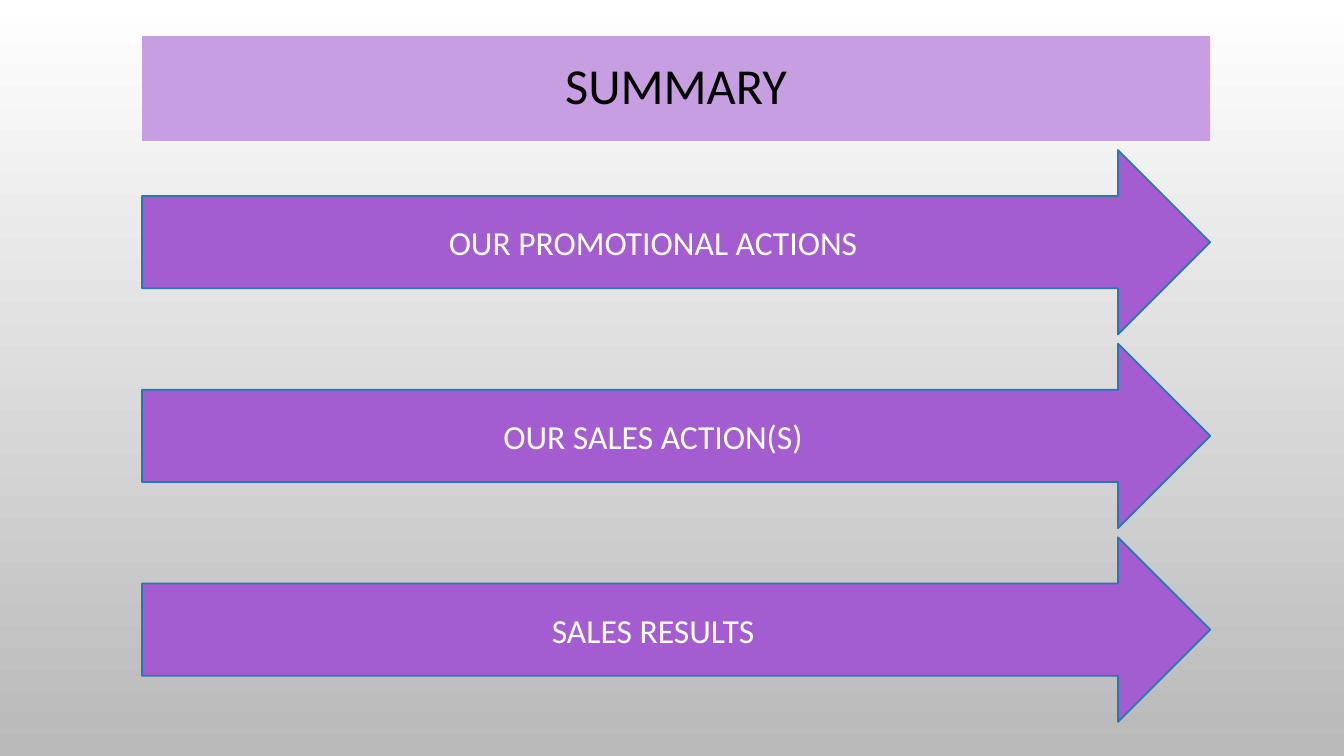
from pptx import Presentation
from pptx.dml.color import RGBColor
from pptx.enum.shapes import MSO_SHAPE
from pptx.enum.text import MSO_ANCHOR, PP_ALIGN
from pptx.util import Cm, Pt


def color(hex_value):
    return RGBColor.from_string(hex_value)


def write(shape, text, size, hex_value):
    frame = shape.text_frame
    frame.word_wrap = True
    frame.vertical_anchor = MSO_ANCHOR.MIDDLE
    paragraph = frame.paragraphs[0]
    paragraph.alignment = PP_ALIGN.CENTER
    run = paragraph.add_run()
    run.text = text
    run.font.name = "Calibri"
    run.font.size = Pt(size)
    run.font.color.rgb = color(hex_value)
    return paragraph


presentation = Presentation()
presentation.slide_width = Cm(33.87)
presentation.slide_height = Cm(19.05)
slide = presentation.slides.add_slide(presentation.slide_layouts[5])

# Background: white at the top to grey at the bottom
background = slide.background.fill
background.gradient()
background.gradient_angle = 270
for stop, shade in zip(background.gradient_stops, ("FFFFFF", "B9B9B9")):
    stop.color.rgb = color(shade)

# Shared column of the title and the arrows
LEFT, WIDTH = Cm(3.58), Cm(26.92)

# Title band
summary = slide.shapes.title
summary.left, summary.top, summary.width, summary.height = LEFT, Cm(0.91), WIDTH, Cm(2.64)
summary.fill.solid()
summary.fill.fore_color.rgb = color("C89EE3")
write(summary, "SUMMARY", 36, "000000").line_spacing = 0.9

# One arrow per topic
topics = ["OUR PROMOTIONAL ACTIONS", "OUR SALES ACTION(S)", "SALES RESULTS"]
for row, topic in enumerate(topics):
    arrow = slide.shapes.add_shape(
        MSO_SHAPE.RIGHT_ARROW, LEFT, Cm(3.78 + row * 4.88), WIDTH, Cm(4.65))
    arrow.shadow.inherit = False
    arrow.fill.solid()
    arrow.fill.fore_color.rgb = color("A35DD1")
    arrow.line.color.rgb = color("2379B0")
    arrow.line.width = Pt(1.25)
    write(arrow, topic, 24, "FFFFFF")

presentation.save("out.pptx")
